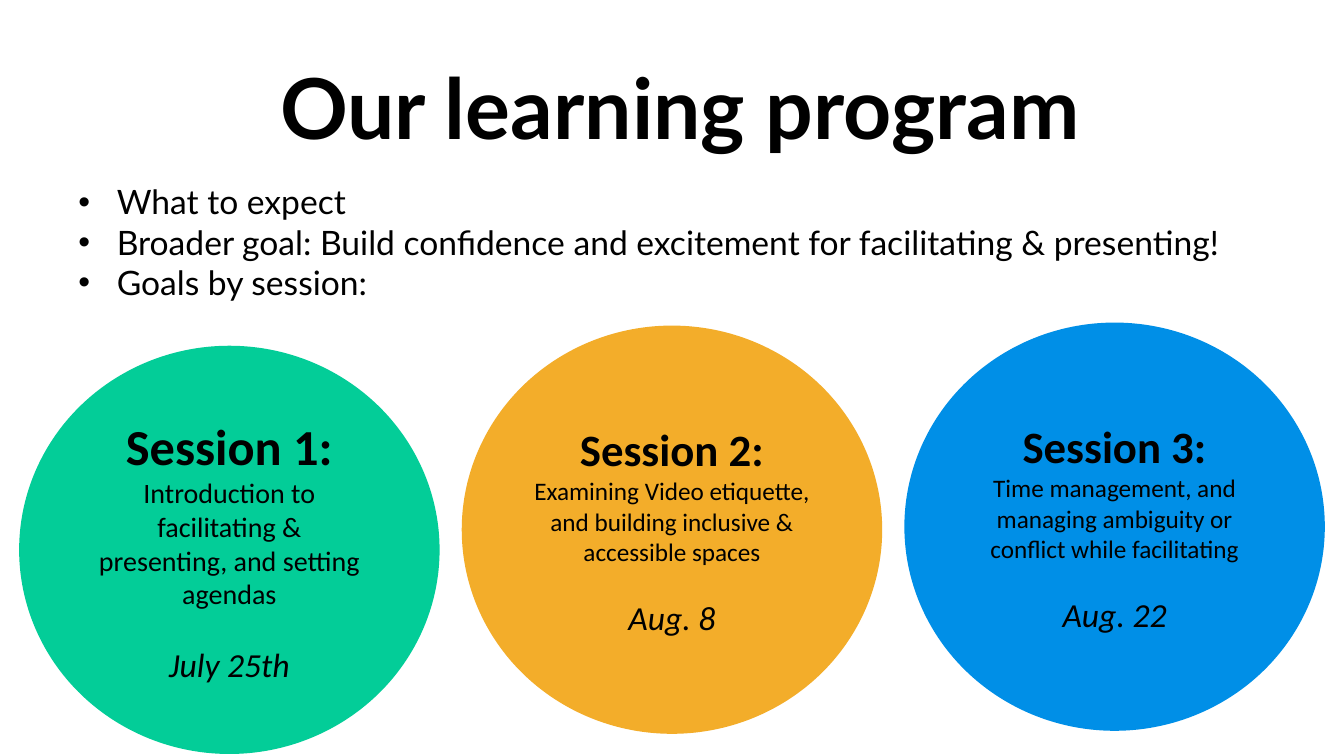
from lxml.etree import SubElement
from pptx import Presentation
from pptx.dml.color import RGBColor
from pptx.enum.shapes import MSO_SHAPE as Shape
from pptx.enum.text import MSO_ANCHOR as Anchor, MSO_AUTO_SIZE as Fit, PP_ALIGN as Align
from pptx.oxml.ns import qn
from pptx.util import Inches, Pt

BLACK = RGBColor(0x00, 0x00, 0x00)
GREEN = RGBColor(0x03, 0xCD, 0x98)
GOLD = RGBColor(0xF3, 0xAD, 0x2A)
BLUE = RGBColor(0x00, 0x8F, 0xE7)

GOALS = [
    "What to expect",
    "Broader goal: Build confidence and excitement for facilitating & presenting!",
    "Goals by session:",
]
SESSIONS = [
    ("Session 1:", "Introduction to facilitating & presenting, and setting agendas",
     "July 25th", GREEN, 3.43, 36, 20),
    ("Session 2:", "Examining Video etiquette, and building inclusive & accessible spaces",
     "Aug. 8", GOLD, 3.23, 32, 18),
    ("Session 3:", "Time management, and managing ambiguity or conflict while facilitating",
     "Aug. 22", BLUE, 3.2, 32, 18),
]
LEFT, STEP = 0.19, 4.39


def write(frame, text, size, font="Lato", bold=False, italic=False,
          align=Align.LEFT, before=0):
    """Write one paragraph, filling the frame's empty first one if it can."""
    para = frame.paragraphs[0]
    if para.runs:
        para = frame.add_paragraph()
    para.alignment = align
    para.space_before = Pt(before)
    run = para.add_run()
    run.text = text
    run.font.size = Pt(size)
    run.font.name = font
    run.font.bold = bold
    run.font.italic = italic
    run.font.color.rgb = BLACK
    return para


def add_title(slide, text):
    """Place and fill the title."""
    title = slide.shapes.title
    title.left, title.top = Inches(2.68), Inches(0.5)
    title.width, title.height = Inches(9.68), Inches(1.11)
    frame = title.text_frame
    frame.auto_size = Fit.NONE
    frame.vertical_anchor = Anchor.TOP
    write(frame, text, 60, bold=True)


def add_list(slide, items):
    """Add the bulleted list."""
    box = slide.shapes.add_textbox(Inches(0.68), Inches(1.75), Inches(12.28), Inches(1.31))
    frame = box.text_frame
    frame.word_wrap = True
    for item in items:
        props = write(frame, item, 24)._p.get_or_add_pPr()
        props.set("marL", str(Inches(0.38)))
        props.set("indent", str(Inches(-0.38)))
        SubElement(props, qn("a:buFont"), typeface="Arial")
        SubElement(props, qn("a:buChar"), char="•")


def add_disc(slide, left, top, fill, name, goal, date, large, small):
    """Add one session's disc with its name, goal and date."""
    disc = slide.shapes.add_shape(Shape.OVAL, Inches(left), Inches(top),
                                  Inches(4.17), Inches(4.05))
    disc.shadow.inherit = False
    disc.fill.solid()
    disc.fill.fore_color.rgb = fill
    disc.line.fill.background()
    frame = disc.text_frame
    frame.word_wrap = True
    frame.vertical_anchor = Anchor.MIDDLE
    style = {"font": "Calibri", "align": Align.CENTER}
    write(frame, name, large, bold=True, **style)
    write(frame, goal, small, **style)
    write(frame, date, 24, italic=True, before=round(small * 1.22), **style)


def main():
    """Build and save the slide."""
    deck = Presentation()
    deck.slide_width, deck.slide_height = Inches(13.33), Inches(7.5)
    slide = deck.slides.add_slide(deck.slide_layouts[5])
    add_title(slide, "Our learning program")
    add_list(slide, GOALS)
    for i, (name, goal, date, fill, top, large, small) in enumerate(SESSIONS):
        add_disc(slide, LEFT + i * STEP, top, fill, name, goal, date, large, small)
    deck.save("out.pptx")


if __name__ == "__main__":
    main()
